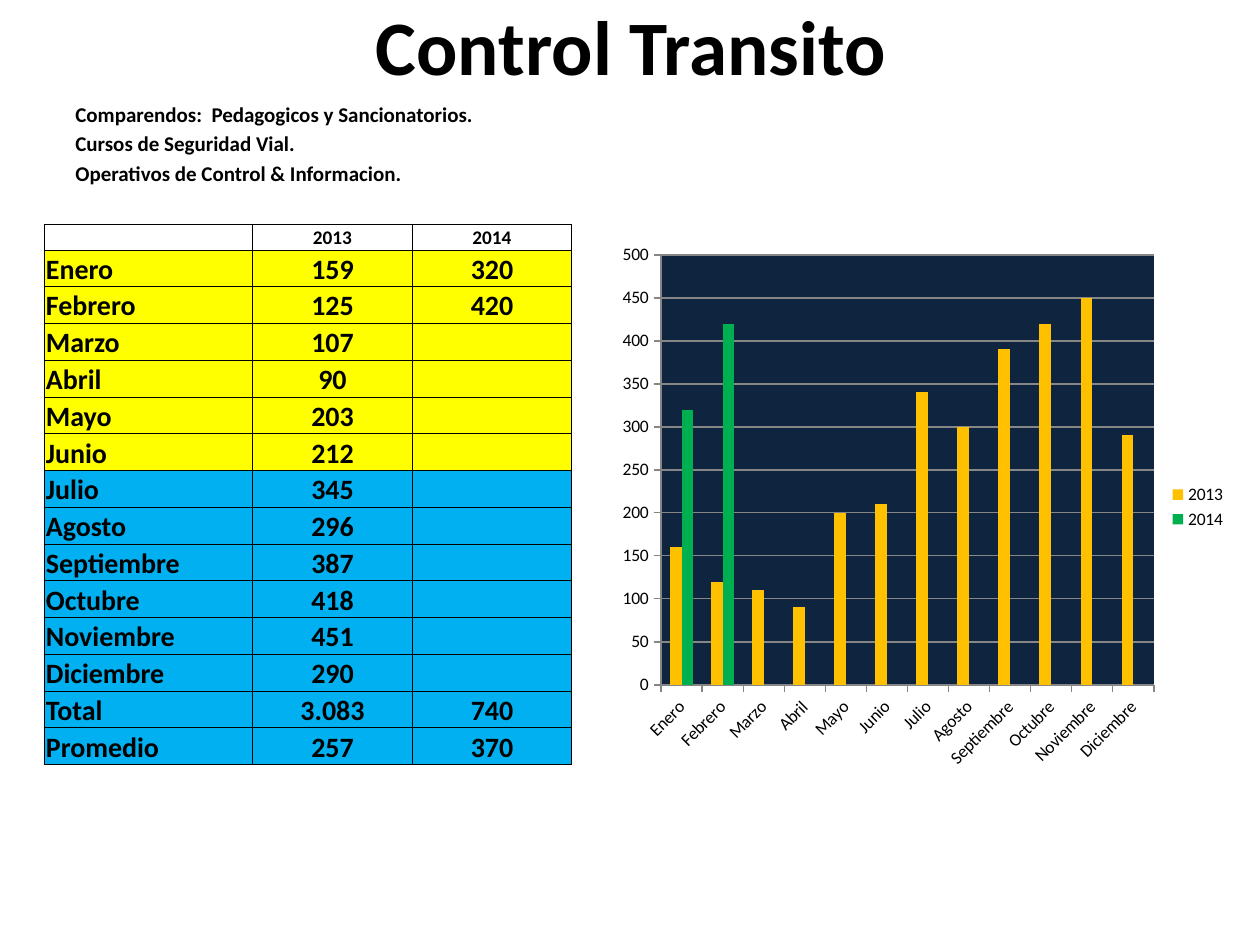
import lxml.etree
import pptx
import pptx.chart.data
import pptx.dml.color
import pptx.enum.chart
import pptx.enum.text
import pptx.oxml
import pptx.oxml.ns
import pptx.util

PX = 914400 / 126
BLACK = pptx.dml.color.RGBColor(0x00, 0x00, 0x00)
GREY = pptx.dml.color.RGBColor(0x86, 0x86, 0x86)
YELLOW = pptx.dml.color.RGBColor(0xFF, 0xFF, 0x00)
BLUE = pptx.dml.color.RGBColor(0x00, 0xB0, 0xF0)
NAVY = pptx.dml.color.RGBColor(0x0F, 0x24, 0x3E)
AMBER = pptx.dml.color.RGBColor(0xFF, 0xC0, 0x00)
GREEN = pptx.dml.color.RGBColor(0x00, 0xB0, 0x50)
FONT = "Calibri"
Pt = pptx.util.Pt
ALIGN = pptx.enum.text.PP_ALIGN
ANCHOR = pptx.enum.text.MSO_ANCHOR

MONTHS = ["Enero", "Febrero", "Marzo", "Abril", "Mayo", "Junio", "Julio",
          "Agosto", "Septiembre", "Octubre", "Noviembre", "Diciembre"]
Y2013 = [159, 125, 107, 90, 203, 212, 345, 296, 387, 418, 451, 290]
Y2014 = [320, 420] + [None] * 10
# Chart values, to the nearest ten that can be read from the columns
CHART_2013 = [160, 120, 110, 90, 200, 210, 340, 300, 390, 420, 450, 290]


def px(*lengths):
    return [pptx.util.Emu(round(n * PX)) for n in lengths]


def style(font, size, bold=True):
    font.name, font.size, font.bold = FONT, Pt(size), bold
    font.color.rgb = BLACK


prs = pptx.Presentation()
prs.slide_width, prs.slide_height = px(1260, 945)
s = prs.slides.add_slide(prs.slide_layouts[5])

# Title
title = s.shapes.title
title.left, title.top, title.width, title.height = px(64, -34, 1134, 158)
tf = title.text_frame
tf.text = "Control Transito"
tf.vertical_anchor = ANCHOR.MIDDLE
tf.paragraphs[0].alignment = ALIGN.CENTER
style(tf.paragraphs[0].font, 44)

# Activities
tf = s.shapes.add_textbox(*px(63, 95, 1134, 748)).text_frame
tf.word_wrap = True
tf.text = ("Comparendos:  Pedagogicos y Sancionatorios.\n"
           "Cursos de Seguridad Vial.\n"
           "Operativos de Control & Informacion.")
for p in tf.paragraphs:
    p.space_before = Pt(2.4)
    style(p.font, 12)

# Chart of both years
data = pptx.chart.data.CategoryChartData(number_format="#,##0")
data.categories = MONTHS
data.add_series("2013", CHART_2013)
data.add_series("2014", Y2014)
chart = s.shapes.add_chart(pptx.enum.chart.XL_CHART_TYPE.COLUMN_CLUSTERED,
                           *px(610, 234, 629, 546), data).chart
style(chart.font, 10, bold=False)
chart.has_title = False
chart.has_legend = True
chart.legend.position = pptx.enum.chart.XL_LEGEND_POSITION.RIGHT
chart.legend.include_in_layout = False
plot = chart.plots[0]
plot.gap_width, plot.overlap = 150, 0
plot.vary_by_categories = False
for series, color in zip(plot.series, (AMBER, GREEN)):
    series.format.fill.solid()
    series.format.fill.fore_color.rgb = color
val, cat = chart.value_axis, chart.category_axis
val.minimum_scale, val.maximum_scale, val.major_unit = 0, 500, 50
val.has_major_gridlines = True
val.tick_labels.number_format = "#,##0"
val.tick_labels.number_format_is_linked = False
for line in (val.format.line, cat.format.line, val.major_gridlines.format.line):
    line.color.rgb = GREY
    line.width = Pt(0.75)
for axis in (val, cat):
    axis.major_tick_mark = pptx.enum.chart.XL_TICK_MARK.OUTSIDE
    style(axis.tick_labels.font, 10, bold=False)
cat._element.find(".//" + pptx.oxml.ns.qn("a:bodyPr")).set("rot", "-2700000")

# Plot area place (as shares of the chart) and fill
NS = pptx.oxml.ns.nsdecls("c", "a")
area = chart._chartSpace.chart.plotArea
for old in area.findall(pptx.oxml.ns.qn("c:layout")):
    area.remove(old)
sides = "".join(f'<c:{k} val="{v}"/>' for k, v in (
    ("layoutTarget", "inner"), ("xMode", "edge"), ("yMode", "edge"),
    ("x", 51 / 629), ("y", 21 / 546), ("w", 493 / 629), ("h", 430 / 546)))
area.insert(0, pptx.oxml.parse_xml(
    f"<c:layout {NS}><c:manualLayout>{sides}</c:manualLayout></c:layout>"))
area.append(pptx.oxml.parse_xml(
    f'<c:spPr {NS}><a:solidFill><a:srgbClr val="{NAVY}"/></a:solidFill></c:spPr>'))

# Table of monthly figures
rows = [("", "2013", "2014")]
rows += [(m, a, "" if b is None else b) for m, a, b in zip(MONTHS, Y2013, Y2014)]
rows += [("Total", "3.083", 740), ("Promedio", 257, 370)]
table = s.shapes.add_table(len(rows), 3, *px(44, 224, 527, 541)).table
table.first_row = table.horz_banding = False
for col, width in zip(table.columns, px(208, 160, 159)):
    col.width = width
for i, values in enumerate(rows):
    header = i == 0
    table.rows[i].height = px(26 if header else (541 - 26) / 14)[0]
    for j, value in enumerate(values):
        cell = table.cell(i, j)
        cell.text = str(value)
        cell.margin_left, cell.margin_top, cell.margin_right, cell.margin_bottom = px(2, 1, 1, 0)
        cell.vertical_anchor = ANCHOR.MIDDLE if header else ANCHOR.BOTTOM
        p = cell.text_frame.paragraphs[0]
        p.alignment = ALIGN.CENTER if j else ALIGN.LEFT
        size = 11 if header else 16
        style(p.font, size)
        if value == "":
            end = lxml.etree.SubElement(p._p, pptx.oxml.ns.qn("a:endParaRPr"))
            end.set("sz", str(size * 100))
        # Borders come before the fill in the cell properties
        for side in "LRTB":
            cell._tc.get_or_add_tcPr().append(pptx.oxml.parse_xml(
                f'<a:ln{side} {NS} w="{Pt(0.5)}"><a:solidFill>'
                f'<a:srgbClr val="{BLACK}"/></a:solidFill></a:ln{side}>'))
        if header:
            cell.fill.background()
        else:
            cell.fill.solid()
            cell.fill.fore_color.rgb = YELLOW if i <= 6 else BLUE

prs.save("out.pptx")
